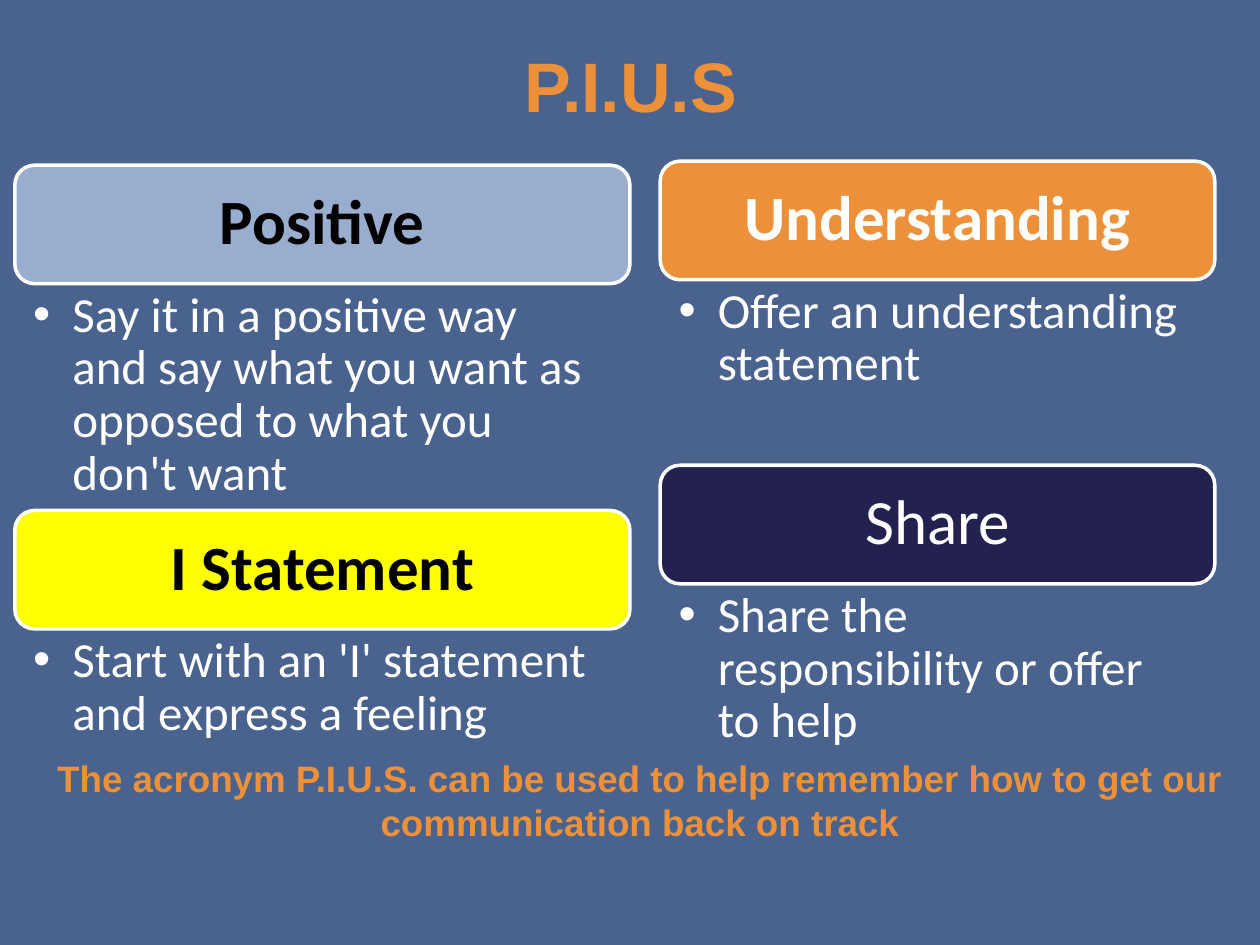
from lxml import etree
from pptx import Presentation
from pptx import util as u
from pptx.dml.color import RGBColor
from pptx.enum import shapes, text
from pptx.oxml import ns

THEME = {
    "background": "49628E", "accent": "EC9039", "light": "FFFFFF", "dark": "000000",
    "sky": "99AECF", "yellow": "FFFF00", "navy": "232150",
    "title_size": 40, "heading_size": 36, "body_size": 28, "closing_size": 21,
    "display_font": "Arial", "body_font": "Calibri", "outline": 2,
}

TITLE = "P.I.U.S"
CLOSING = ("The acronym P.I.U.S. can be used to help remember how to get our "
           "communication back on track")
COLUMNS = [
    {"left": 0.3, "width": 12.4, "top": 3.33, "step": 6.96, "insets": (0.56, 0.71), "steps": [
        ("Positive", "sky", "dark", True,
         "Say it in a positive way and say what you want as opposed to what you don't want"),
        ("I Statement", "yellow", "dark", True,
         "Start with an 'I' statement and express a feeling"),
    ]},
    {"left": 13.31, "width": 11.18, "top": 3.25, "step": 6.13, "insets": (0.71, 0.71), "steps": [
        ("Understanding", "accent", "light", True, "Offer an understanding statement"),
        ("Share", "navy", "light", False, "Share the responsibility or offer to help"),
    ]},
]
HEADING_HEIGHT = 2.39
LAST_BODY_HEIGHT = 2.44
INDENT = 0.79


def color(key):
    return RGBColor.from_string(THEME[key])


def apply(target, values):
    for key, value in values.items():
        setattr(target, key, value)


def write(shape, words, font, size, ink, bold, insets, frame_values, paragraph_values, bullet=False):
    frame = shape.text_frame
    sides = ("margin_left", "margin_top", "margin_right", "margin_bottom")
    apply(frame, {"word_wrap": True, **frame_values})
    apply(frame, {side: u.Cm(inset) for side, inset in zip(sides, insets)})
    paragraph = frame.paragraphs[0]
    paragraph.text = words
    apply(paragraph, paragraph_values)
    if bullet:
        properties = paragraph._p.get_or_add_pPr()
        properties.set("marL", str(u.Cm(INDENT)))
        properties.set("indent", str(-u.Cm(INDENT)))
        etree.SubElement(properties, ns.qn("a:buFont"), typeface="Arial")
        etree.SubElement(properties, ns.qn("a:buChar"), char="•")
    run_font = paragraph.runs[0].font
    apply(run_font, {"name": THEME[font], "size": u.Pt(THEME[size]), "bold": bold})
    run_font.color.rgb = color(ink)


def add_heading(slide, place, words, fill, ink, bold):
    heading = slide.shapes.add_shape(shapes.MSO_SHAPE.ROUNDED_RECTANGLE, *map(u.Cm, place))
    heading.shadow.inherit = False
    heading.fill.solid()
    heading.fill.fore_color.rgb = color(fill)
    heading.line.color.rgb = color("light")
    heading.line.width = u.Pt(THEME["outline"])
    write(heading, words, "body_font", "heading_size", ink, bold, (0.38,) * 4,
          {"vertical_anchor": text.MSO_ANCHOR.MIDDLE},
          {"alignment": text.PP_ALIGN.CENTER, "line_spacing": 0.9})


def add_body(slide, place, words, right_inset):
    body = slide.shapes.add_textbox(*map(u.Cm, place))
    write(body, words, "body_font", "body_size", "light", False, (0.37, 0.12, right_inset, 0.12),
          {"vertical_anchor": text.MSO_ANCHOR.TOP},
          {"alignment": text.PP_ALIGN.LEFT, "line_spacing": 0.9}, bullet=True)


def add_banner(slide, place, words, size, anchor):
    banner = slide.shapes.add_textbox(*map(u.Cm, place))
    write(banner, words, "display_font", size, "accent", True, (0.18, 0.1, 0.18, 0.1),
          {"vertical_anchor": anchor}, {"alignment": text.PP_ALIGN.CENTER})


def add_column(slide, column):
    left, width = column["left"], column["width"]
    last = len(column["steps"]) - 1
    for index, (name, fill, ink, bold, advice) in enumerate(column["steps"]):
        top = column["top"] + index * column["step"]
        body_height = LAST_BODY_HEIGHT if index == last else column["step"] - HEADING_HEIGHT
        add_heading(slide, (left, top, width, HEADING_HEIGHT), name, fill, ink, bold)
        add_body(slide, (left, top + HEADING_HEIGHT, width, body_height), advice,
                 column["insets"][index])


def main():
    deck = Presentation()
    apply(deck, {"slide_width": u.Cm(25.4), "slide_height": u.Cm(19.05)})
    slide = deck.slides.add_slide(deck.slide_layouts[6])
    slide.background.fill.solid()
    slide.background.fill.fore_color.rgb = color("background")
    add_banner(slide, (1.5, 0.69, 22.43, 2.03), TITLE, "title_size", text.MSO_ANCHOR.MIDDLE)
    for column in COLUMNS:
        add_column(slide, column)
    add_banner(slide, (0.5, 15.14, 24.8, 1.98), CLOSING, "closing_size", text.MSO_ANCHOR.TOP)
    deck.save("out.pptx")


if __name__ == "__main__":
    main()
